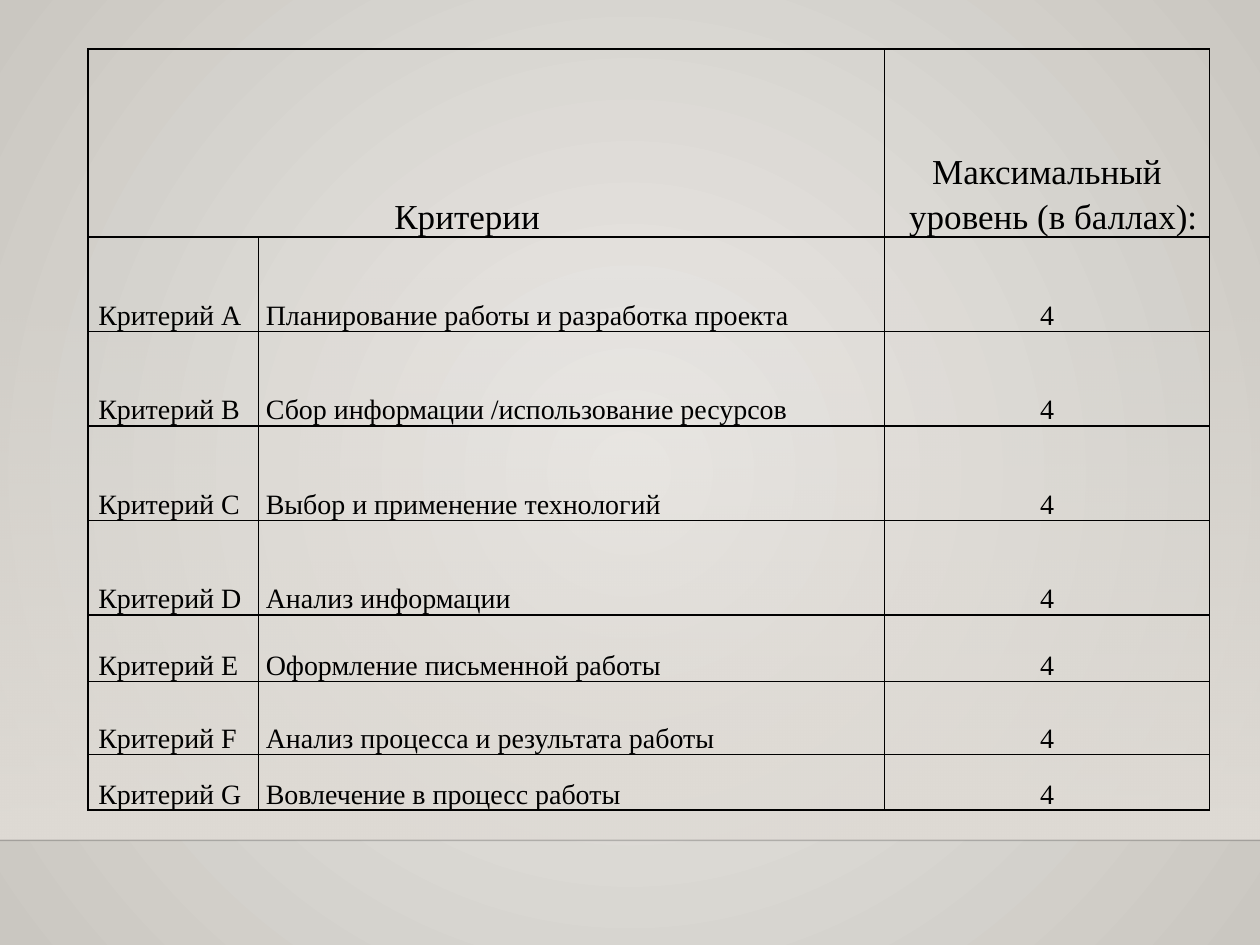
from pptx import Presentation
from pptx.dml.color import RGBColor
from pptx.enum.shapes import MSO_CONNECTOR, MSO_SHAPE
from pptx.enum.text import MSO_ANCHOR, PP_ALIGN
from pptx.oxml.ns import qn
from pptx.util import Inches, Pt
from lxml import etree

BLANK_LAYOUT = 6
RECT = MSO_SHAPE.RECTANGLE
STRAIGHT = MSO_CONNECTOR.STRAIGHT
BOTTOM = MSO_ANCHOR.BOTTOM
LEFT, CENTER = PP_ALIGN.LEFT, PP_ALIGN.CENTER
FONT = "Times New Roman"


def rgb(color):
    return RGBColor.from_string(color)


def add_border(cell, side, visible):
    ln = etree.SubElement(cell._tc.get_or_add_tcPr(), qn(f"a:ln{side}"), w=str(Pt(1)))
    if visible:
        fill = etree.SubElement(ln, qn("a:solidFill"))
        etree.SubElement(fill, qn("a:srgbClr"), val="000000")
    else:
        etree.SubElement(ln, qn("a:noFill"))


prs = Presentation()
prs.slide_width, prs.slide_height = Inches(10), Inches(7.5)
s = prs.slides.add_slide(prs.slide_layouts[BLANK_LAYOUT])

# Radial background
bg = s.background.fill
bg.gradient()
for stop, color in zip(bg.gradient_stops, ("ECEAE7", "CAC7C1")):
    stop.color.rgb = rgb(color)
    stop.position = 0 if color == "ECEAE7" else 1
grad = s._element.find(".//" + qn("a:gradFill"))
grad.remove(grad.find(qn("a:lin")))
circle = etree.SubElement(grad, qn("a:path"), path="circle")
etree.SubElement(circle, qn("a:fillToRect"), l="50000", t="50000", r="50000", b="50000")

# Band that fades in downwards to the floor line
band = s.shapes.add_shape(RECT, 0, Inches(2.2), Inches(10), Inches(4.46))
band.shadow.inherit = False
band.line.fill.background()
band.fill.gradient()
band.fill.gradient_angle = 270
for position, stop in enumerate(band.fill.gradient_stops):
    stop.color.rgb = rgb("DFDBD5")
    stop.position = position
top_color = band._element.spPr.find(".//" + qn("a:srgbClr"))
etree.SubElement(top_color, qn("a:alpha"), val="0")

floor = s.shapes.add_connector(STRAIGHT, 0, Inches(6.67), Inches(10), Inches(6.67))
floor.line.width = Pt(1)
floor.line.color.rgb = rgb("000001")
floor_color = floor._element.spPr.find(".//" + qn("a:srgbClr"))
etree.SubElement(floor_color, qn("a:alpha"), val="20000")
etree.SubElement(floor._element.spPr, qn("a:effectLst"))

# Criteria table
criteria = [
    "Планирование работы и разработка проекта",
    "Сбор информации /использование ресурсов",
    "Выбор и применение технологий",
    "Анализ информации",
    "Оформление письменной работы",
    "Анализ процесса и результата работы",
    "Вовлечение в процесс работы",
]
rows = [("", "Критерии", "Максимальный уровень (в баллах):")]
rows += [(f"Критерий {letter}", text, "4") for letter, text in zip("ABCDEFG", criteria)]
col_widths = [1.35, 4.97, 2.58]
row_heights = [1.49, 0.75, 0.75, 0.75, 0.75, 0.53, 0.58, 0.44]
aligns = [LEFT, LEFT, CENTER]
header_indents = [(0, 0), (1.08, 0), (0.1, -0.1)]
body_indents = [(0.08, 0), (0.06, 0), (0, 0)]

table = s.shapes.add_table(len(rows), len(col_widths), Inches(0.7), Inches(0.39),
                           Inches(8.91), Inches(6.04)).table
table.first_row = table.horz_banding = False
for column, width in zip(table.columns, col_widths):
    column.width = Inches(width)

for i, (row, height) in enumerate(zip(rows, row_heights)):
    table.rows[i].height = Inches(height)
    indents = body_indents if i else header_indents
    for j, text in enumerate(row):
        cell = table.cell(i, j)
        cell.margin_left = cell.margin_right = cell.margin_top = cell.margin_bottom = 0
        cell.vertical_anchor = BOTTOM
        for side in "LRTB":
            open_side = i == 0 and (j, side) in ((0, "R"), (1, "L"))
            add_border(cell, side, not open_side)
        cell.fill.background()
        if not text:
            continue
        p = cell.text_frame.paragraphs[0]
        p.alignment = aligns[j]
        p.line_spacing = 1.15
        margin, indent = indents[j]
        pPr = p._p.get_or_add_pPr()
        pPr.set("marL", str(Inches(margin)))
        pPr.set("indent", str(Inches(indent)))
        r = p.add_run()
        r.text = text
        r.font.name = FONT
        r.font.size = Pt(16 if i else 20)
        r.font.color.rgb = rgb("000000")

prs.save("out.pptx")
